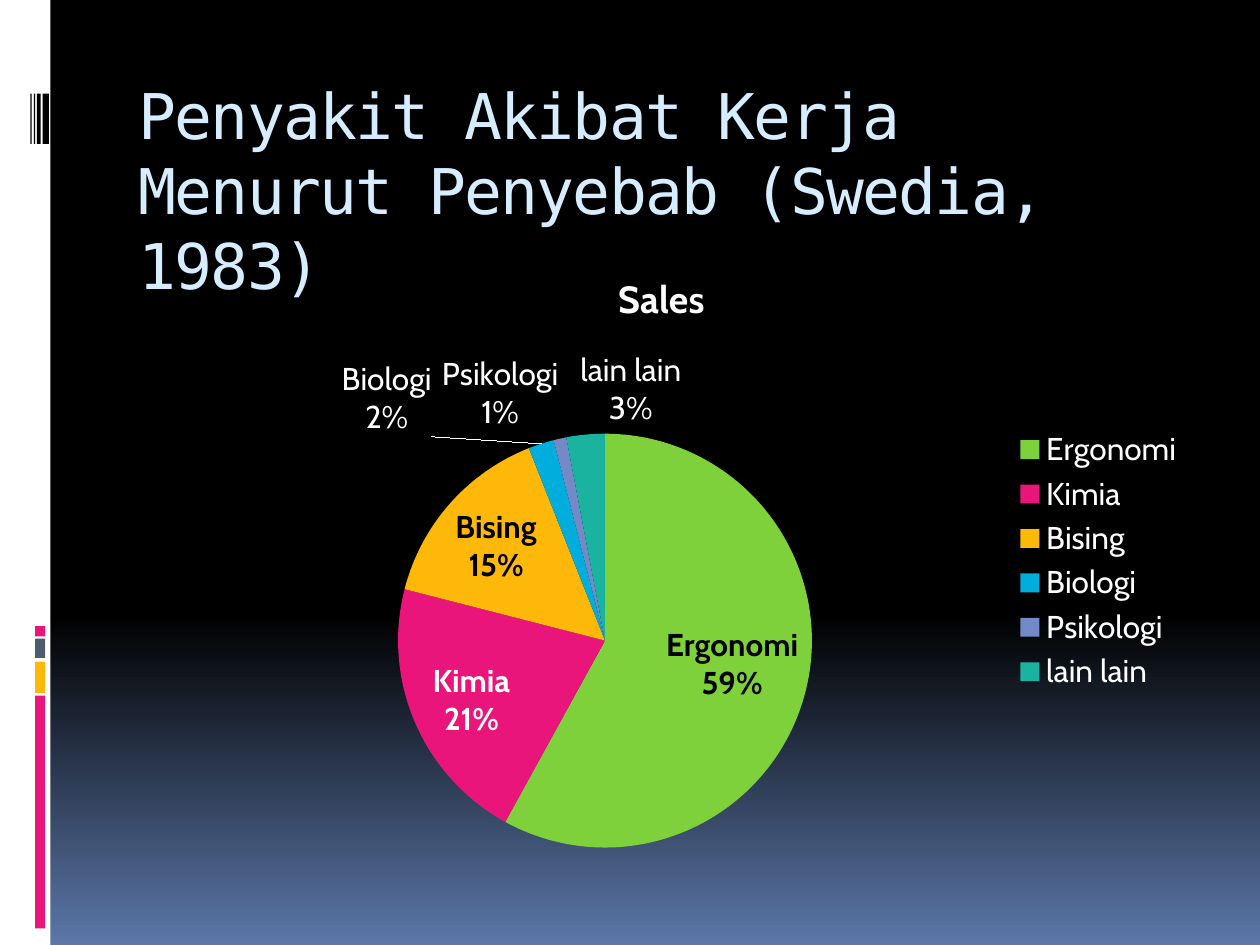
from copy import deepcopy

from lxml import etree
from pptx import Presentation
from pptx.chart import data
from pptx.dml import color
from pptx.enum import chart as ch, shapes, text
from pptx.oxml import ns
from pptx.util import Pt

FONT = "Cabin"
PARTS = [
    ("Ergonomi", 58, "7FD13B"), ("Kimia", 21, "EA157A"),
    ("Bising", 15, "FEB80A"), ("Biologi", 2, "00ADDC"),
    ("Psikologi", 1, "738AC8"), ("lain lain", 3, "1AB39F"),
]
INNER = [("Ergonomi\n59%", "000000"), ("Kimia\n21%", "FFFFFF"), ("Bising\n15%", "000000")]
SHIFTS = {0: (0, 0.02), 1: (0.01, 0.03), 3: (-0.1, 0), 5: (0.09, 0)}


def rgb(code):
    """Turn a hex string into a colour."""
    return color.RGBColor.from_string(code)


def style(font, code, size, bold=False, name=FONT):
    """Set the look of a font."""
    font.name, font.size, font.bold = name, Pt(size), bold
    font.color.rgb = rgb(code)


def node(tag, **attrs):
    """Make one XML element."""
    item = etree.Element(ns.qn(tag))
    for key, val in attrs.items():
        item.set(key, str(val))
    return item


def layout(target, mode, **parts):
    """Make a manual layout the one layout of a chart part."""
    for old in target.findall(ns.qn("c:layout")):
        target.remove(old)
    outer, inner = node("c:layout"), node("c:manualLayout")
    outer.append(inner)
    if mode == "edge":
        inner.append(node("c:layoutTarget", val="inner"))
        inner.extend([node("c:xMode", val=mode), node("c:yMode", val=mode)])
    inner.extend([node(f"c:{key}", val=val) for key, val in parts.items()])
    return outer


def backdrop(slide):
    """Fill the background with a black to blue gradient."""
    fill = slide.background.fill
    fill.gradient()
    fill.gradient_angle = 270
    last = fill.gradient_stops[-1]._gs
    last.addprevious(deepcopy(last))
    for stop, (pos, code) in zip(
        fill.gradient_stops, [(0, "000000"), (0.65, "000000"), (1, "5B77A8")]
    ):
        stop.position = pos
        stop.color.rgb = rgb(code)


def sidebar(slide, x, y, w, h):
    """Draw the white strip with its colour blocks and bar code."""
    blocks = [
        (0, 0, w, h, "FFFFFF"),
        (20, 397.5, 5.8, 133, "EA157A"), (20, 378, 5.8, 18, "FEB80A"),
        (20, 365, 5.8, 11, "4E5B6F"), (20, 357.8, 5.8, 5.8, "EA157A"),
    ]
    blocks += [
        (left, 53.5, wide, 28.8, "000000")
        for left, wide in [(24.4, 3.6), (21.1, 2.2), (19.4, 0.7), (17.4, 0.7)]
    ]
    for left, top, wide, high, code in blocks:
        bar = slide.shapes.add_shape(
            shapes.MSO_SHAPE.RECTANGLE, Pt(x + left), Pt(y + top), Pt(wide), Pt(high)
        )
        bar.shadow.inherit = False
        bar.fill.solid()
        bar.fill.fore_color.rgb = rgb(code)
        bar.line.fill.background()


def heading(slide, x, y, w, h):
    """Place and format the title."""
    title = slide.shapes.title
    title.left, title.top, title.width, title.height = Pt(x), Pt(y), Pt(w), Pt(h)
    frame = title.text_frame
    frame.text = "Penyakit Akibat Kerja Menurut Penyebab (Swedia, 1983)"
    frame.word_wrap = True
    frame.auto_size = text.MSO_AUTO_SIZE.NONE
    frame.vertical_anchor = text.MSO_ANCHOR.TOP
    para = frame.paragraphs[0]
    para.alignment = text.PP_ALIGN.LEFT
    para.line_spacing = Pt(43)
    run = para.runs[0]
    style(run.font, "D6ECFF", 36, name="DejaVu Sans Mono")
    run._r.get_or_add_rPr().set("spc", "-100")


def labels(series):
    """Label the slices, large ones inside and small ones above."""
    tags = series.data_labels
    tags.show_value = False
    tags.show_percentage = tags.show_category_name = True
    tags.number_format, tags.number_format_is_linked = "0%", False
    tags.position = ch.XL_LABEL_POSITION.OUTSIDE_END
    style(tags.font, "FFFFFF", 18)

    for idx, (words, code) in enumerate(INNER):
        tag = series.points[idx].data_label
        tag.text_frame.text = words
        for para in tag.text_frame.paragraphs:
            style(para.runs[0].font, code, 18, True)
        tag.position = ch.XL_LABEL_POSITION.INSIDE_END
    for idx in range(len(INNER), len(PARTS)):
        tag = series.points[idx].data_label
        style(tag.font, "FFFFFF", 18)
        tag.position = ch.XL_LABEL_POSITION.OUTSIDE_END

    root = tags._element
    for item in root.findall(ns.qn("c:dLbl")):
        idx = int(item.find(ns.qn("c:idx")).get("val"))
        if idx in SHIFTS:
            dx, dy = SHIFTS[idx]
            item.insert(1, layout(item, "factor", x=dx, y=dy))
        for key, val in [("Val", 0), ("CatName", 1), ("Percent", 1)]:
            item.find(ns.qn(f"c:show{key}")).set("val", str(val))
    for item in [root, *root.findall(ns.qn("c:dLbl"))]:
        gap = node("c:separator")
        gap.text = "\n"
        item.find(ns.qn("c:showBubbleSize")).addnext(gap)

    for old in root.findall(ns.qn("c:showLeaderLines")):
        root.remove(old)
    lead = tip = node("c:leaderLines")
    for tag in ["c:spPr", "a:ln", "a:solidFill"]:
        tip.append(node(tag))
        tip = tip[0]
    tip.append(node("a:srgbClr", val="FFFFFF"))
    root.extend([node("c:showLeaderLines", val=1), lead])


def pie(slide, x, y, w, h):
    """Add the pie chart with its title and legend."""
    info = data.CategoryChartData()
    info.categories = [name for name, _, _ in PARTS]
    info.add_series("Sales", [val for _, val, _ in PARTS])
    chart = slide.shapes.add_chart(
        ch.XL_CHART_TYPE.PIE, Pt(x), Pt(y), Pt(w), Pt(h), info
    ).chart
    style(chart.font, "FFFFFF", 18)
    chart.has_title = True
    frame = chart.chart_title.text_frame
    frame.text = "Sales"
    style(frame.paragraphs[0].runs[0].font, "FFFFFF", 21.6, True)
    chart.chart_title.include_in_layout = False
    chart.has_legend = True
    chart.legend.position = ch.XL_LEGEND_POSITION.RIGHT
    chart.legend.include_in_layout = False
    style(chart.legend.font, "FFFFFF", 18)

    plot = chart.plots[0]
    plot.vary_by_categories = True
    series = plot.series[0]
    for idx, (_, _, code) in enumerate(PARTS):
        look = series.points[idx].format
        look.fill.solid()
        look.fill.fore_color.rgb = rgb(code)
        look.line.fill.background()
    labels(series)
    area = chart._chartSpace.chart.plotArea
    size = 236.5
    area.insert(0, layout(area, "edge", x=155.5 / w, y=107.5 / h, w=size / w, h=size / h))


def main():
    """Build and save the slide."""
    deck = Presentation()
    deck.slide_width, deck.slide_height = Pt(720), Pt(540)
    slide = deck.slides.add_slide(deck.slide_layouts[5])
    backdrop(slide)
    sidebar(slide, 0, 0, 28.8, 540)
    heading(slide, 72, 40.3, 612, 72)
    pie(slide, 72, 140.4, 612, 360)
    deck.save("out.pptx")


if __name__ == "__main__":
    main()
